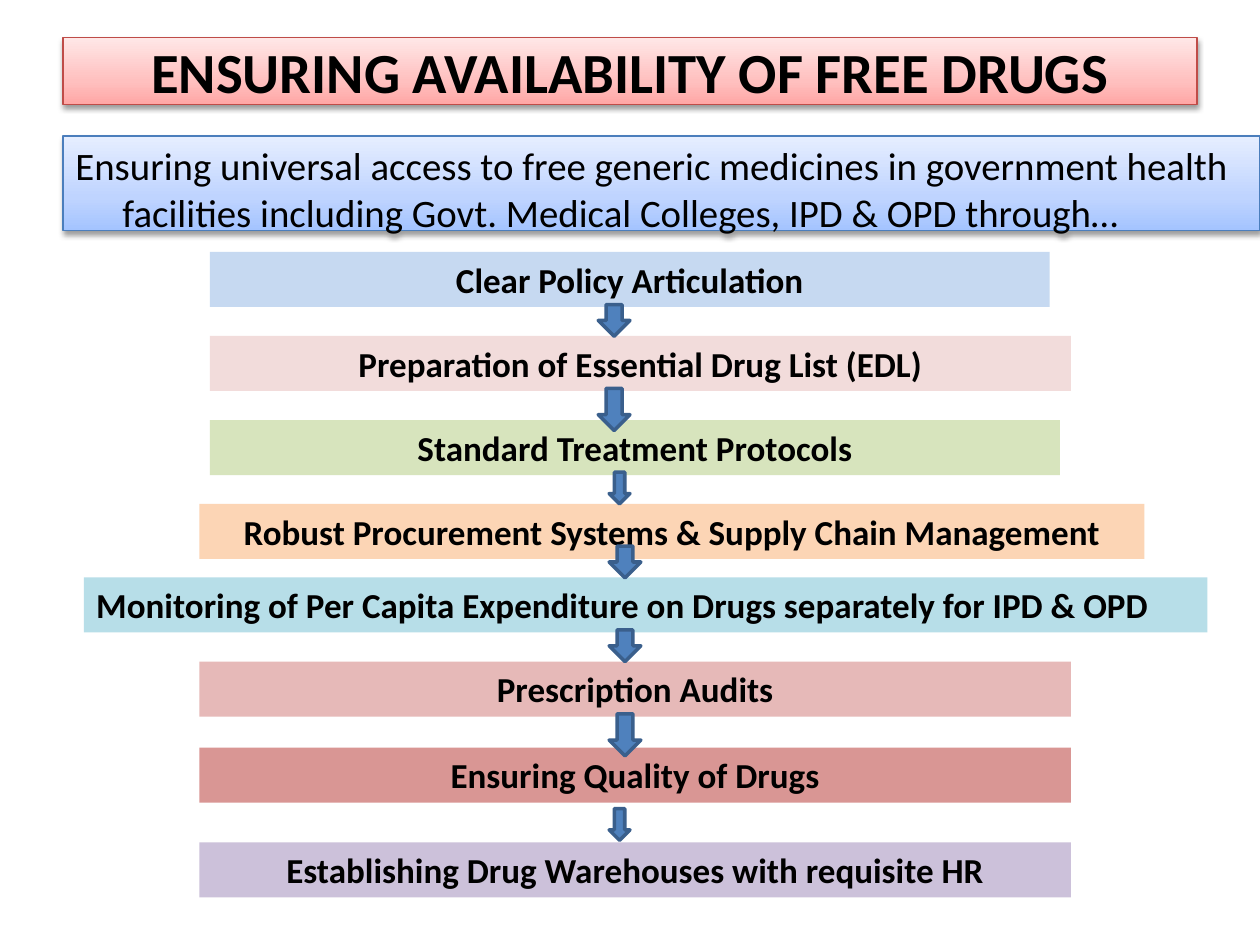
from dataclasses import dataclass

from pptx import Presentation
from pptx.dml.color import RGBColor
from pptx.enum.shapes import MSO_SHAPE
from pptx.enum.text import MSO_ANCHOR, MSO_AUTO_SIZE, PP_ALIGN
from pptx.oxml import parse_xml
from pptx.oxml.ns import nsdecls
from pptx.util import Cm, Pt


@dataclass(frozen=True)
class Theme:
    """Colours, font and type sizes of the slide."""
    font: str = "Calibri"
    text: str = "000000"
    title_size: float = 32.4
    intro_size: float = 22.2
    step_size: float = 20
    title_stops: tuple = ((0, "FFA6A5"), (35, "FFC0BF"), (100, "FFE7E7"))
    title_line: str = "BF4C48"
    intro_stops: tuple = ((0, "A4C4FF"), (35, "BFD4FF"), (100, "E6EEFF"))
    intro_line: str = "4B7EBC"
    arrow_fill: str = "4F81BD"
    arrow_line: str = "3A5F8C"


THEME = Theme()
STEP_HEIGHT = 1.11

STEPS = [
    ("Clear Policy Articulation", "C6D9F1", 4.23, 5.08, 16.93),
    ("Preparation of Essential Drug List (EDL)", "F2DCDB", 4.23, 6.77, 17.36),
    ("Standard Treatment Protocols", "D7E4BD", 4.23, 8.47, 17.14),
    ("Robust Procurement Systems & Supply Chain Management", "FCD5B5", 4.02, 10.16, 19.05),
    ("Monitoring of Per Capita Expenditure on Drugs separately for IPD & OPD",
     "B7DEE8", 1.69, 11.64, 22.65),
    ("Prescription Audits", "E6B9B8", 4.02, 13.34, 17.57),
    ("Ensuring Quality of Drugs", "D99694", 4.02, 15.07, 17.57),
    ("Establishing Drug Warehouses with requisite HR", "CCC1DA", 4.02, 16.98, 17.57),
]
LEFT_ALIGNED_STEP = 4

ARROWS = [
    (12.06, 6.14, 0.64, 0.64),
    (12.06, 7.83, 0.64, 0.85),
    (12.28, 9.52, 0.42, 0.64),
    (12.28, 11.01, 0.64, 0.64),
    (12.28, 12.7, 0.64, 0.64),
    (12.28, 14.39, 0.64, 0.85),
    (12.28, 16.3, 0.42, 0.64),
]


def set_attributes(target, values):
    """Set each attribute of the target from a dict."""
    for name, value in values.items():
        setattr(target, name, value)


def place(shape, left, top, width, height):
    """Position a shape by centimetres."""
    box = {"left": left, "top": top, "width": width, "height": height}
    set_attributes(shape, {name: Cm(value) for name, value in box.items()})


def write_text(shape, text, size, bold, align, anchor=MSO_ANCHOR.TOP):
    """Write one formatted paragraph and return it."""
    frame = shape.text_frame
    set_attributes(frame, {"word_wrap": True, "auto_size": MSO_AUTO_SIZE.NONE,
                           "vertical_anchor": anchor})
    paragraph = frame.paragraphs[0]
    paragraph.alignment = align
    run = paragraph.add_run()
    run.text = text
    set_attributes(run.font, {"name": THEME.font, "size": Pt(size), "bold": bold})
    run.font.color.rgb = RGBColor.from_string(THEME.text)
    return paragraph


def set_line(shape, color, width):
    """Give a shape a solid outline."""
    shape.line.color.rgb = RGBColor.from_string(color)
    shape.line.width = Pt(width)


def style_banner(shape, stops, line_color):
    """Give a banner its upward gradient, outline and soft shadow."""
    stop_xml = "".join(
        f'<a:gs pos="{position * 1000}"><a:srgbClr val="{color}"/></a:gs>'
        for position, color in stops)
    shape.fill.background()
    properties = shape.element.spPr
    no_fill = properties.find("{*}noFill")
    properties.replace(no_fill, parse_xml(
        f'<a:gradFill {nsdecls("a")} rotWithShape="1"><a:gsLst>{stop_xml}</a:gsLst>'
        '<a:lin ang="16200000" scaled="0"/></a:gradFill>'))
    set_line(shape, line_color, 0.75)
    properties.append(parse_xml(
        f'<a:effectLst {nsdecls("a")}><a:outerShdw blurRad="40000" dist="20000" '
        'dir="5400000" rotWithShape="0"><a:srgbClr val="000000">'
        '<a:alpha val="38000"/></a:srgbClr></a:outerShdw></a:effectLst>'))


def add_title(slide, text):
    """Move and format the title placeholder."""
    title = slide.shapes.title
    place(title, 1.27, 0.76, 22.86, 1.35)
    style_banner(title, THEME.title_stops, THEME.title_line)
    write_text(title, text, THEME.title_size, True, PP_ALIGN.CENTER, MSO_ANCHOR.MIDDLE)


def add_intro(slide, text):
    """Add the introduction banner with a hanging indent."""
    intro = slide.shapes.add_textbox(Cm(1.27), Cm(2.74), Cm(24.13), Cm(1.91))
    style_banner(intro, THEME.intro_stops, THEME.intro_line)
    paragraph = write_text(intro, text, THEME.intro_size, False, PP_ALIGN.LEFT)
    indent = Cm(0.95)
    for name, value in {"marL": indent, "indent": -indent}.items():
        paragraph._p.get_or_add_pPr().set(name, str(int(value)))


def add_step(slide, text, color, left, top, width, align):
    """Add one coloured step of the process."""
    step = slide.shapes.add_textbox(Cm(left), Cm(top), Cm(width), Cm(STEP_HEIGHT))
    step.fill.solid()
    step.fill.fore_color.rgb = RGBColor.from_string(color)
    write_text(step, text, THEME.step_size, True, align)


def add_arrow(slide, *box):
    """Add one down arrow between steps."""
    arrow = slide.shapes.add_shape(MSO_SHAPE.DOWN_ARROW, *map(Cm, box))
    arrow.shadow.inherit = False
    arrow.fill.solid()
    arrow.fill.fore_color.rgb = RGBColor.from_string(THEME.arrow_fill)
    set_line(arrow, THEME.arrow_line, 2)


def main():
    """Build and save the slide."""
    presentation = Presentation()
    set_attributes(presentation, {"slide_width": Cm(25.4), "slide_height": Cm(19.05)})
    slide = presentation.slides.add_slide(presentation.slide_layouts.get_by_name("Title Only"))
    add_title(slide, "ENSURING AVAILABILITY OF FREE DRUGS")
    add_intro(slide, "Ensuring universal access to free generic medicines in government health "
                     "facilities including Govt. Medical Colleges, IPD & OPD through…")
    for index, step in enumerate(STEPS):
        align = PP_ALIGN.LEFT if index == LEFT_ALIGNED_STEP else PP_ALIGN.CENTER
        add_step(slide, *step, align)
    for box in ARROWS:
        add_arrow(slide, *box)
    presentation.save("out.pptx")


if __name__ == "__main__":
    main()
